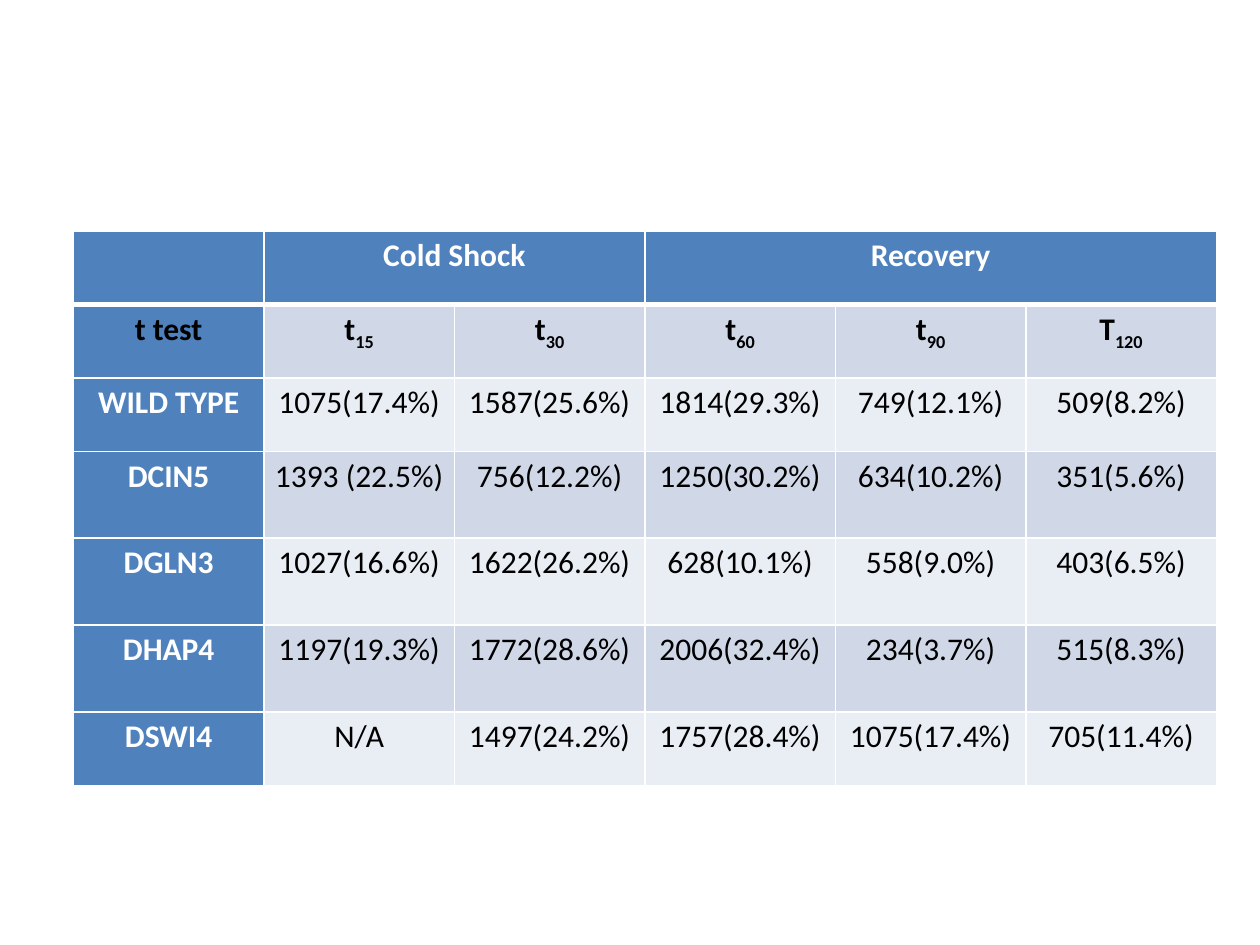
import pptx
import pptx.dml.color
import pptx.enum.text
import pptx.oxml
import pptx.oxml.ns
import pptx.util
from pptx.util import Cm

BLUE, BAND_DARK, BAND_LIGHT = "4F81BD", "D0D8E8", "E9EDF4"
WHITE, BLACK = "FFFFFF", "000000"
COL_WIDTH = Cm(3.84)
ROW_HEIGHTS = [Cm(h) for h in (1.48, 1.48, 1.48, 1.75, 1.75, 1.75, 1.48)]
# An underscore starts a subscript.
ROWS = [
    ["", "Cold Shock", "", "Recovery", "", ""],
    ["t test", "t_15", "t_30", "t_60", "t_90", "T_120"],
    ["WILD TYPE", "1075(17.4%)", "1587(25.6%)", "1814(29.3%)", "749(12.1%)", "509(8.2%)"],
    ["DCIN5", "1393 (22.5%)", "756(12.2%)", "1250(30.2%)", "634(10.2%)", "351(5.6%)"],
    ["DGLN3", "1027(16.6%)", "1622(26.2%)", "628(10.1%)", "558(9.0%)", "403(6.5%)"],
    ["DHAP4", "1197(19.3%)", "1772(28.6%)", "2006(32.4%)", "234(3.7%)", "515(8.3%)"],
    ["DSWI4", "N/A", "1497(24.2%)", "1757(28.4%)", "1075(17.4%)", "705(11.4%)"],
]


def rgb(color):
    return pptx.dml.color.RGBColor.from_string(color)


def set_borders(cell, top, bottom):
    """Draw white borders; must run before the cell is filled."""
    tc_pr = cell._tc.get_or_add_tcPr()
    for side, width in (("L", 1), ("R", 1), ("T", top), ("B", bottom)):
        tc_pr.append(pptx.oxml.parse_xml(
            f'<a:ln{side} {pptx.oxml.ns.nsdecls("a")} w="{pptx.util.Pt(width)}">'
            f'<a:solidFill><a:srgbClr val="{WHITE}"/></a:solidFill></a:ln{side}>'))


def set_text(cell, text, color, bold):
    cell.margin_left = cell.margin_right = Cm(0.18)
    cell.margin_top = cell.margin_bottom = 0
    base, _, subscript = text.partition("_")
    p = cell.text_frame.paragraphs[0]
    p.text = base
    p.alignment = pptx.enum.text.PP_ALIGN.CENTER
    p.line_spacing = 1.15
    if subscript:
        r = p.add_run()
        r.text = subscript
        r._r.get_or_add_rPr().set("baseline", "-25000")
    for r in p.runs:
        r.font.name = "Calibri"
        r.font.size = pptx.util.Pt(18)
        r.font.bold = bold
        r.font.color.rgb = rgb(color)


def format_cell(cell, row, col, text):
    is_header = row == 0 or col == 0
    set_borders(cell, top=3 if row == 1 else 1, bottom=3 if row == 0 else 1)
    cell.fill.solid()
    band = BAND_DARK if row % 2 else BAND_LIGHT
    cell.fill.fore_color.rgb = rgb(BLUE if is_header else band)
    color = WHITE if is_header and row != 1 else BLACK
    set_text(cell, text, color, bold=is_header or row == 1)


def add_results_table(slide):
    n_rows, n_cols = len(ROWS), len(ROWS[0])
    table = slide.shapes.add_table(n_rows, n_cols, Cm(1.48), Cm(4.66),
                                   COL_WIDTH * n_cols, sum(ROW_HEIGHTS)).table
    for column in table.columns:
        column.width = COL_WIDTH
    for row, height in zip(table.rows, ROW_HEIGHTS):
        row.height = height
    for i, values in enumerate(ROWS):
        for j, text in enumerate(values):
            format_cell(table.cell(i, j), i, j, text)
    for first, last in ((1, 2), (3, 5)):
        table.cell(0, first).merge(table.cell(0, last))


def main():
    prs = pptx.Presentation()
    prs.slide_width, prs.slide_height = Cm(25.4), Cm(19.05)
    slide = prs.slides.add_slide(prs.slide_layouts[6])
    add_results_table(slide)
    prs.save("out.pptx")


if __name__ == "__main__":
    main()
